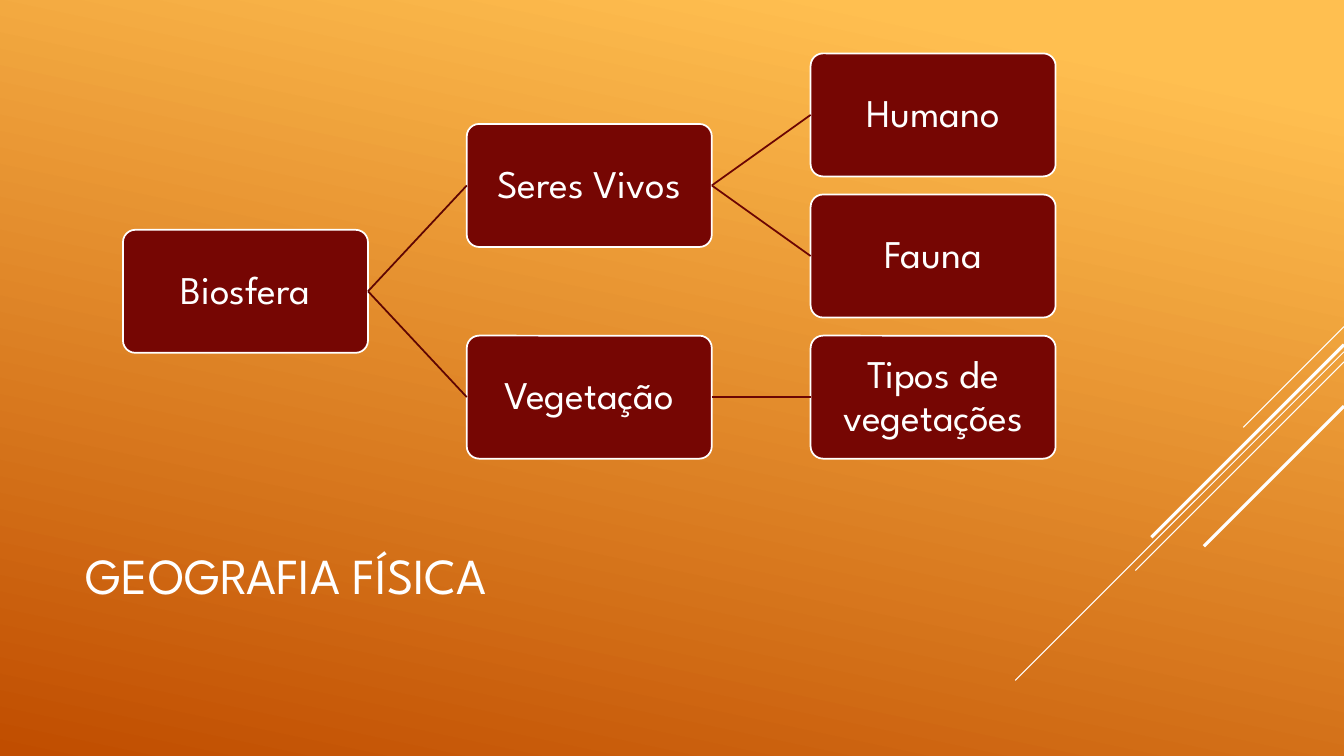
from lxml import etree
from pptx import Presentation
from pptx.dml.color import RGBColor
from pptx.enum.shapes import MSO_CONNECTOR, MSO_SHAPE
from pptx.enum.text import MSO_ANCHOR, MSO_AUTO_SIZE, PP_ALIGN
from pptx.oxml.ns import qn
from pptx.util import Inches, Pt

STRAIGHT = MSO_CONNECTOR.STRAIGHT
ROUNDED = MSO_SHAPE.ROUNDED_RECTANGLE
MIDDLE = MSO_ANCHOR.MIDDLE
LEFT, CENTER = PP_ALIGN.LEFT, PP_ALIGN.CENTER
NO_AUTOFIT = MSO_AUTO_SIZE.NONE
LEFT_SIDE, RIGHT_SIDE = 1, 3

SLIDE_WIDTH, SLIDE_HEIGHT = 13.33, 7.5
FONT = "League Spartan"
COLORS = {
    "light": "FFBF50",
    "dark": "C04D00",
    "box": "760603",
    "first_link": "5E0502",
    "second_link": "6B0503",
    "white": "FFFFFF",
}
LINK_COLORS = ["first_link", "second_link"]

# Tree grid, in inches
GRID_LEFT, GRID_TOP = 1.22, 0.53
COLUMN_STEP, ROW_STEP = 3.41, 1.4
BOX_WIDTH, BOX_HEIGHT = 2.43, 1.22

TREE = ("Biosfera", [
    ("Seres Vivos", [("Humano", []), ("Fauna", [])]),
    ("Vegetação", [("Tipos de vegetações", [])]),
])

# Diagonals falling at 45° from the right edge: top, length across, line width
DIAGONALS = [
    (3.24, 1.0, 0.75),
    (3.49, 3.26, 0.75),
    (3.59, 2.07, 0.75),
    (3.42, 1.91, 2.25),
    (4.03, 1.39, 2.25),
]


def color(name):
    return RGBColor.from_string(COLORS[name])


class SlideBuilder:
    def __init__(self, presentation):
        title_only = presentation.slide_layouts[5]
        self.slide = presentation.slides.add_slide(title_only)
        self.shapes = self.slide.shapes
        self.next_leaf_row = 0

    def background(self):
        fill = self.slide.background.fill
        fill.gradient()
        fill.gradient_angle = 258
        stops = [("light", 0.1), ("dark", 1.0)]
        for stop, (name, position) in zip(fill.gradient_stops, stops):
            stop.color.rgb = color(name)
            stop.position = position

    def set_text(self, shape, text, size, alignment):
        frame = shape.text_frame
        frame.text = text
        frame.word_wrap = True
        frame.auto_size = NO_AUTOFIT
        frame.vertical_anchor = MIDDLE
        paragraph = frame.paragraphs[0]
        paragraph.alignment = alignment
        paragraph.line_spacing = 0.9
        paragraph.font.name = FONT
        paragraph.font.size = Pt(size)
        paragraph.font.color.rgb = color("white")
        return frame

    def title(self, text):
        title = self.shapes.title
        title.left, title.top = Inches(0.75), Inches(4.91)
        title.width, title.height = Inches(9.33), Inches(1.65)
        self.set_text(title, text, 36, LEFT)

    def line(self, start, end, color_name, width):
        connector = self.shapes.add_connector(
            STRAIGHT, *(Inches(value) for value in (*start, *end)))
        connector.line.color.rgb = color(color_name)
        connector.line.width = Pt(width)
        properties = connector._element.spPr
        etree.SubElement(properties, qn("a:effectLst"))
        return connector

    def diagonal(self, top, length, width):
        self.line((SLIDE_WIDTH, top), (SLIDE_WIDTH - length, top + length),
                  "white", width)

    def box(self, text, column, row):
        box = self.shapes.add_shape(
            ROUNDED,
            Inches(GRID_LEFT + column * COLUMN_STEP),
            Inches(GRID_TOP + row * ROW_STEP),
            Inches(BOX_WIDTH), Inches(BOX_HEIGHT))
        box.adjustments[0] = 0.1
        box.shadow.inherit = False
        box.fill.solid()
        box.fill.fore_color.rgb = color("box")
        box.line.color.rgb = color("white")
        box.line.width = Pt(1.25)
        frame = self.set_text(box, text, 28, CENTER)
        frame.margin_left = frame.margin_right = Inches(0.05)
        frame.margin_top = frame.margin_bottom = Inches(0.05)
        return box

    def link(self, parent, child, color_name):
        connector = self.line((0, 0), (1, 1), color_name, 1.25)
        connector.begin_connect(parent, RIGHT_SIDE)
        connector.end_connect(child, LEFT_SIDE)

    def tree(self, node, column=0):
        """Draw a node centred on its children; return its box and row."""
        text, children = node
        branches = [self.tree(child, column + 1) for child in children]
        if branches:
            row = sum(child_row for _, child_row in branches) / len(branches)
        else:
            row = self.next_leaf_row
            self.next_leaf_row += 1
        box = self.box(text, column, row)
        for child_box, _ in branches:
            self.link(box, child_box, LINK_COLORS[column])
        return box, row


def main():
    presentation = Presentation()
    presentation.slide_width = Inches(SLIDE_WIDTH)
    presentation.slide_height = Inches(SLIDE_HEIGHT)
    builder = SlideBuilder(presentation)
    builder.background()
    for diagonal in DIAGONALS:
        builder.diagonal(*diagonal)
    builder.title("GEOGRAFIA FÍSICA")
    builder.tree(TREE)
    presentation.save("out.pptx")


if __name__ == "__main__":
    main()
